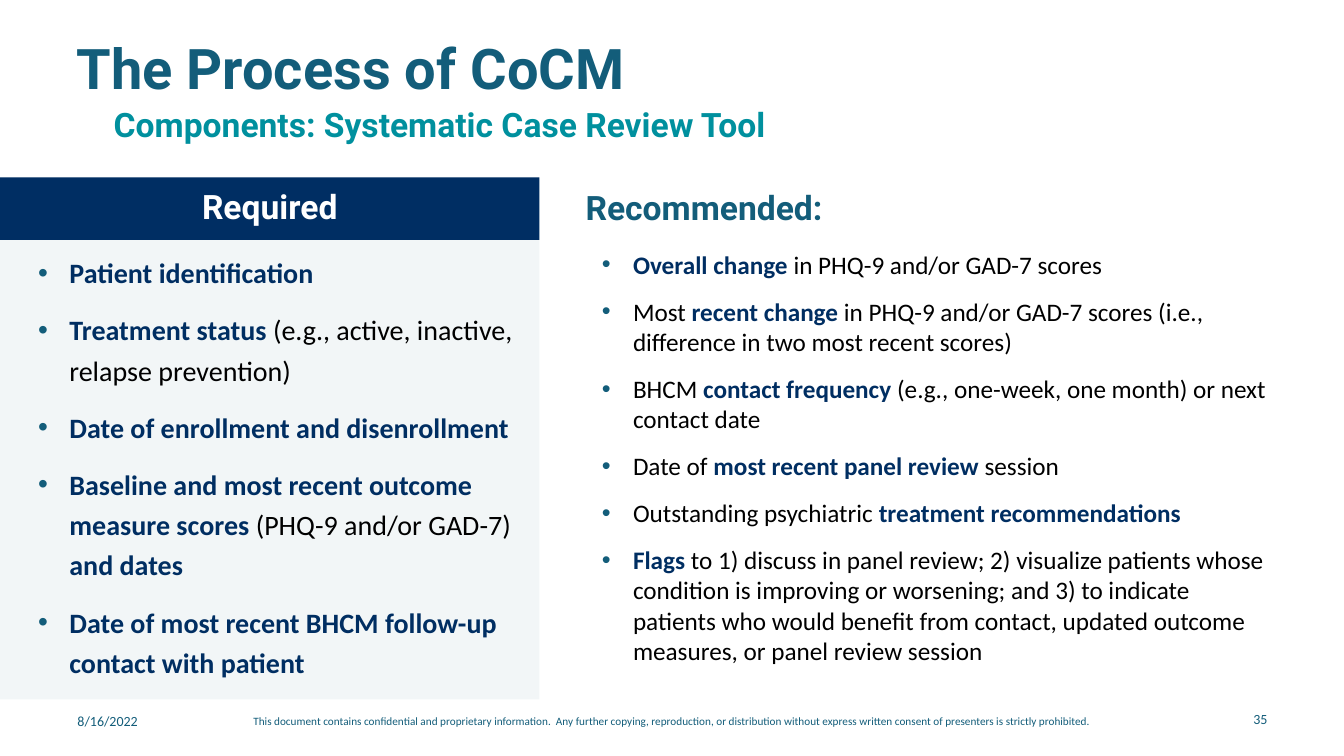
"""Build the slide on the components of the Systematic Case Review Tool."""
from lxml.etree import SubElement
from pptx import Presentation
from pptx.dml.color import RGBColor
from pptx.enum.shapes import MSO_SHAPE
from pptx.enum.text import MSO_ANCHOR, MSO_AUTO_SIZE, PP_ALIGN
from pptx.oxml.ns import qn
from pptx.util import Pt

TITLE = "The Process of CoCM"
SUBTITLE = "Components: Systematic Case Review Tool"
REQUIRED = [
    "*Patient identification*",
    "*Treatment status *(e.g., active, inactive, relapse prevention)",
    "*Date of enrollment and disenrollment*",
    "*Baseline and most recent outcome measure scores* (PHQ-9 and/or GAD-7) *and dates*",
    "*Date of most recent BHCM follow-up contact with patient*",
]
RECOMMENDED = [
    "*Overall change *in PHQ-9 and/or GAD-7 scores",
    "Most *recent change *in PHQ-9 and/or GAD-7 scores (i.e., difference in two most recent scores)",
    "BHCM *contact frequency *(e.g., one-week, one month) or next contact date",
    "Date of *most recent panel review *session",
    "Outstanding psychiatric *treatment recommendations*",
    "*Flags* to 1) discuss in panel review; 2) visualize patients whose condition is improving "
    "or worsening; and 3) to indicate patients who would benefit from contact, updated outcome "
    "measures, or panel review session",
]
DISCLAIMER = (
    "This document contains confidential and proprietary information.  Any further copying, "
    "reproduction, or distribution without express written consent of presenters is strictly "
    "prohibited."
)
BLUE, TEAL, NAVY, STRONG = "135D7A", "00909E", "002E63", "002E62"
BLACK, WHITE, TINT = "000000", "FFFFFF", "4A858E"
PANEL_TOP, PANEL_W, PANEL_H, HEADER_H = 176, 535, 518, 62
LIST_TOP, INDENT = 242, 31
LEFT, CENTER, RIGHT = PP_ALIGN.LEFT, PP_ALIGN.CENTER, PP_ALIGN.RIGHT
FOOTER = [
    ("8/16/2022", (67, 702, 101, 40), 10, LEFT),
    ("35", (1166, 700, 101, 40), 10, RIGHT),
    (DISCLAIMER, (168, 704, 998, 40), 8, CENTER),
]


def px(n):
    return n * 9144


def rgb(color):
    return RGBColor.from_string(color)


def style(r, font, size, color, bold=False):
    r.font.name, r.font.size, r.font.bold = font, Pt(size), bold
    r.font.color.rgb = rgb(color)


def add_rect(s, box, color, alpha=None):
    sp = s.shapes.add_shape(MSO_SHAPE.RECTANGLE, *map(px, box))
    sp.shadow.inherit = False
    sp.fill.solid()
    sp.fill.fore_color.rgb = rgb(color)
    sp.line.fill.background()
    if alpha:
        clr = sp.fill._xPr.find(".//" + qn("a:srgbClr"))
        SubElement(clr, qn("a:alpha"), val=str(alpha * 1000))


def add_box(s, box):
    tf = s.shapes.add_textbox(*map(px, box)).text_frame
    tf.word_wrap = True
    return tf


def set_line(tf, text, font, size, color, bold=False, align=LEFT):
    tf.text = text
    p = tf.paragraphs[0]
    p.alignment = align
    style(p.runs[0], font, size, color, bold)
    return p


def add_bullets(s, box, items, size, spacing):
    tf = add_box(s, box)
    for i, item in enumerate(items):
        p = tf.add_paragraph() if i else tf.paragraphs[0]
        p.line_spacing, p.space_after = spacing, Pt(12)
        pPr = p._p.get_or_add_pPr()
        pPr.set("marL", str(px(INDENT)))
        pPr.set("indent", str(px(-INDENT)))
        clr = SubElement(pPr, qn("a:buClr"))
        SubElement(clr, qn("a:srgbClr"), val=BLUE)
        SubElement(pPr, qn("a:buFont"), typeface="Arial")
        SubElement(pPr, qn("a:buChar"), char="•")
        for j, part in enumerate(item.split("*")):
            if part:
                r = p.add_run()
                r.text = part
                strong = j % 2 == 1
                style(r, "Calibri", size, STRONG if strong else BLACK, strong)


def main():
    prs = Presentation()
    prs.slide_width, prs.slide_height = px(1333), px(750)
    s = prs.slides.add_slide(prs.slide_layouts[5])

    title = s.shapes.title
    title.left, title.top, title.width, title.height = map(px, (66, 40, 1175, 62))
    tf = title.text_frame
    tf.auto_size, tf.vertical_anchor = MSO_AUTO_SIZE.NONE, MSO_ANCHOR.MIDDLE
    set_line(tf, TITLE, "Roboto", 40, BLUE, True).line_spacing = 0.9

    tf = add_box(s, (103, 59, 1166, 90))
    tf.vertical_anchor = MSO_ANCHOR.BOTTOM
    set_line(tf, SUBTITLE, "Roboto", 24, TEAL, True).line_spacing = 0.9

    add_rect(s, (0, PANEL_TOP, PANEL_W, PANEL_H), TINT, 7)
    add_rect(s, (0, PANEL_TOP, PANEL_W, HEADER_H), NAVY)
    set_line(add_box(s, (0, 180, PANEL_W, 50)), "Required", "Roboto", 24, WHITE, True, CENTER)
    set_line(add_box(s, (571, 181, 733, 50)), "Recommended:", "Roboto", 24, BLUE, True)

    add_bullets(s, (28, LIST_TOP, 522, 381), REQUIRED, 20, 1.2)
    add_bullets(s, (587, LIST_TOP, 682, 359), RECOMMENDED, 18, 1.0)

    for text, box, size, align in FOOTER:
        set_line(add_box(s, box), text, "Calibri", size, BLUE, align=align)
    prs.save("out.pptx")


if __name__ == "__main__":
    main()
